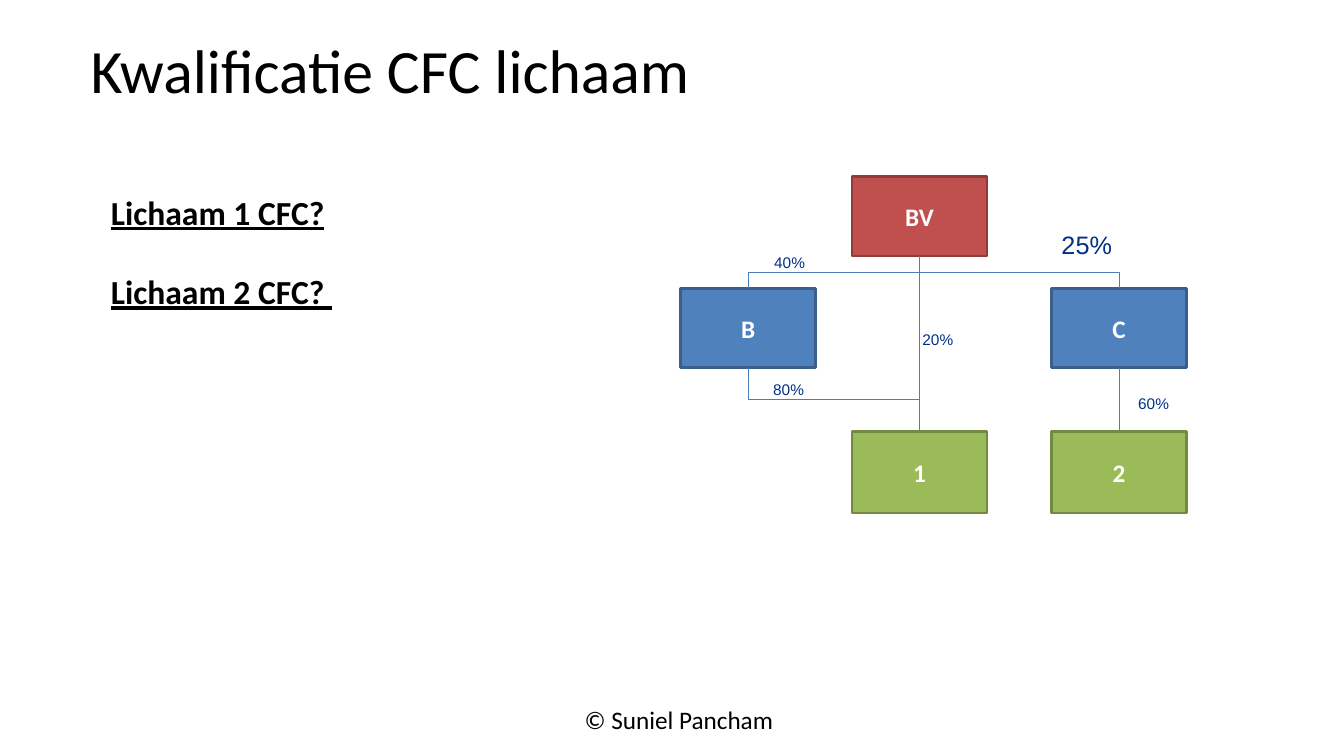
from pptx import Presentation
from pptx.dml.color import RGBColor
from pptx.enum.shapes import MSO_CONNECTOR, MSO_SHAPE
from pptx.enum.text import MSO_ANCHOR, PP_ALIGN
from pptx.oxml.ns import qn
from pptx.util import Inches, Pt
from lxml.etree import SubElement

THEME = {
    "red": ("C0504D", "8E3B39"),
    "blue": ("4F81BD", "3A5F8C"),
    "green": ("9BBB59", "738A42"),
    "connector": "4B7EBC",
    "title": {"name": "Calibri", "size": Pt(44), "color": "000000"},
    "question": {"name": "Calibri", "size": Pt(24), "color": "000000", "bold": True, "underline": True},
    "entity": {"name": "Calibri", "size": Pt(18), "color": "FFFFFF", "bold": True},
    "share": {"name": "Arial", "size": Pt(11), "color": "003087"},
    "large_share": {"name": "Arial", "size": Pt(18), "color": "003087"},
    "footer": {"name": "Calibri", "size": Pt(18), "color": "000000"},
}


def write_text(paragraph, text, style):
    run = paragraph.add_run()
    run.text = text
    for attribute, value in THEME[style].items():
        if attribute == "color":
            run.font.color.rgb = RGBColor.from_string(value)
        else:
            setattr(run.font, attribute, value)


def add_text(left, top, width, height, lines, style, frame_format):
    box = slide.shapes.add_textbox(Inches(left), Inches(top), Inches(width), Inches(height))
    frame = box.text_frame
    for attribute, value in frame_format.items():
        setattr(frame, attribute, value)
    for index, line in enumerate(lines):
        paragraph = frame.add_paragraph() if index else frame.paragraphs[0]
        if index:
            paragraph.space_before = Pt(28)
        write_text(paragraph, line, style)


presentation = Presentation()
presentation.slide_width = Inches(13.33)
presentation.slide_height = Inches(7.5)
slide = presentation.slides.add_slide(presentation.slide_layouts[6])

flush = {"word_wrap": True, "margin_left": 0, "margin_right": 0, "margin_top": 0, "margin_bottom": 0}
add_text(1.1, 1.22, 6.31, 5.41, ["Lichaam 1 CFC?", "Lichaam 2 CFC? "], "question",
         {**flush, "margin_top": Inches(0.68)})
add_text(0.9, 0.32, 11.33, 0.74, ["Kwalificatie CFC lichaam"], "title", flush)

entity_width = 1.34
entities = {
    "BV": (8.45, 1.75, 0.79, "red"),
    "B": (6.75, 2.86, 0.79, "blue"),
    "C": (10.43, 2.86, 0.79, "blue"),
    "1": (8.45, 4.28, 0.81, "green"),
    "2": (10.43, 4.28, 0.81, "green"),
}
for name, (left, top, height, color) in entities.items():
    shape = slide.shapes.add_shape(
        MSO_SHAPE.RECTANGLE, Inches(left), Inches(top), Inches(entity_width), Inches(height))
    fill_color, line_color = THEME[color]
    shape.shadow.inherit = False
    shape.fill.solid()
    shape.fill.fore_color.rgb = RGBColor.from_string(fill_color)
    shape.line.color.rgb = RGBColor.from_string(line_color)
    shape.line.width = Pt(2)
    shape.text_frame.vertical_anchor = MSO_ANCHOR.MIDDLE
    paragraph = shape.text_frame.paragraphs[0]
    paragraph.alignment = PP_ALIGN.CENTER
    write_text(paragraph, name, "entity")

for owner, owned in [("BV", "1"), ("C", "2"), ("BV", "B"), ("BV", "C"), ("B", "1")]:
    owner_left, owner_top, owner_height, _ = entities[owner]
    owned_left, bottom, _, _ = entities[owned]
    start = owner_left + entity_width / 2
    end = owned_left + entity_width / 2
    top = owner_top + owner_height
    if start == end:
        connector = slide.shapes.add_connector(
            MSO_CONNECTOR.STRAIGHT, Inches(start), Inches(top), Inches(end), Inches(bottom))
    else:
        center_x, center_y = (start + end) / 2, (top + bottom) / 2
        half_drop, half_reach = (bottom - top) / 2, (start - end) / 2
        connector = slide.shapes.add_connector(
            MSO_CONNECTOR.ELBOW,
            Inches(center_x - half_drop), Inches(center_y - half_reach),
            Inches(center_x + half_drop), Inches(center_y + half_reach))
        connector._element.spPr.find(qn("a:xfrm")).set("rot", str(90 * 60000))
    connector.line.color.rgb = RGBColor.from_string(THEME["connector"])
    connector.line.width = Pt(0.75)
    SubElement(connector._element.spPr, qn("a:effectLst"))

shares = [
    ("60%", 11.19, 3.86),
    ("40%", 7.58, 2.46),
    ("80%", 7.57, 3.72),
    ("20%", 9.05, 3.23),
]
for share, left, top in shares:
    add_text(left, top, 1.21, 0.29, [share], "share", {"word_wrap": True})
add_text(10.43, 2.23, 1.07, 0.4, ["25%"], "large_share", {"word_wrap": True})
add_text(5.7, 6.94, 2.09, 0.4, ["© Suniel Pancham"], "footer", {"word_wrap": False})

presentation.save("out.pptx")
